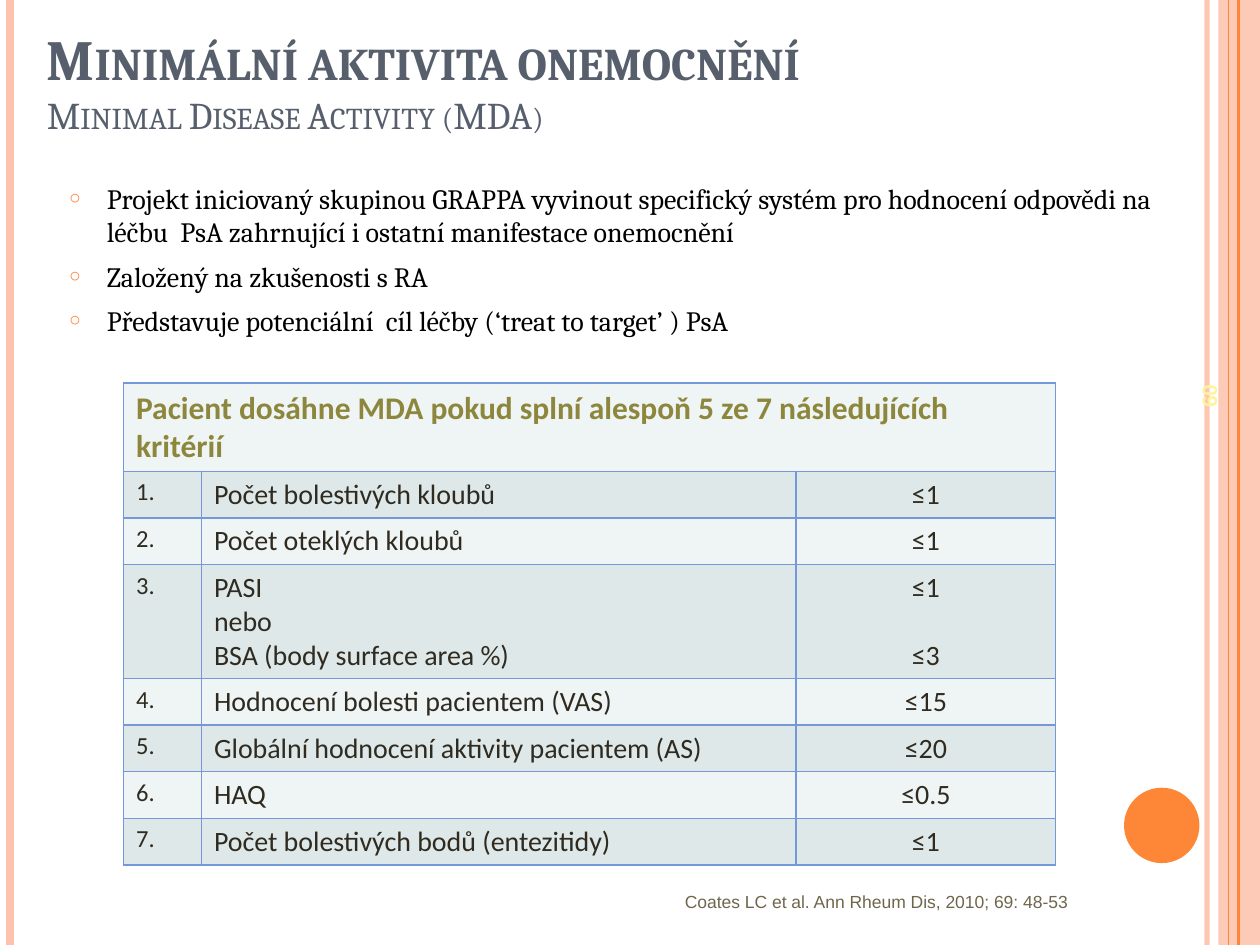
from lxml.etree import SubElement
from pptx import Presentation
from pptx.dml.color import RGBColor
from pptx.enum.shapes import MSO_CONNECTOR, MSO_SHAPE
from pptx.enum.text import MSO_ANCHOR, MSO_AUTO_SIZE, PP_ALIGN
from pptx.oxml.ns import qn
from pptx.util import Cm, Pt

COLORS = {
    "peach": "FEC3AE", "orange": "FE8637", "title": "575F6D", "body": "000000",
    "number": "FFF39D", "border": "7598D9", "light": "EFF4F4", "dark": "DEE8E8",
    "heading": "8D873E", "cell": "2F2B20", "citation": "6F664C",
}


def add_text(para, text, font, size, color, bold=False):
    run = para.add_run()
    run.text = text
    run.font.name = font
    run.font.size = Pt(size)
    run.font.bold = bold
    run.font.color.rgb = RGBColor.from_string(COLORS[color])
    return run


def set_alpha(color_format_parent, percent):
    """Make the solid colour below an element partly transparent."""
    color = next(color_format_parent.iter(qn("a:srgbClr")))
    SubElement(color, qn("a:alpha")).set("val", str(percent * 1000))


deck = Presentation()
deck.slide_width, deck.slide_height = Cm(25.4), Cm(19.05)
page = deck.slides.add_slide(deck.slide_layouts[1])
shapes = page.shapes

# Side decoration
band = shapes.add_shape(MSO_SHAPE.RECTANGLE, Cm(24.56), 0, Cm(0.84), deck.slide_height)
dot = shapes.add_shape(MSO_SHAPE.OVAL, Cm(22.66), Cm(15.88), Cm(1.52), Cm(1.52))
for shape, color in ((band, "peach"), (dot, "orange")):
    shape.shadow.inherit = False
    shape.fill.solid()
    shape.fill.fore_color.rgb = RGBColor.from_string(COLORS[color])
    shape.line.fill.background()
set_alpha(band._element.spPr, 87)

for x, color, width, opacity in (
    (24.33, "peach", 3, 93), (0.2, "peach", 4.5, 100),
    (24.97, "orange", 1.5, 100), (24.77, "orange", 0.75, 100),
):
    stripe = shapes.add_connector(MSO_CONNECTOR.STRAIGHT, Cm(x), 0, Cm(x), deck.slide_height)
    stripe.line.color.rgb = RGBColor.from_string(COLORS[color])
    stripe.line.width = Pt(width)
    if opacity < 100:
        set_alpha(stripe._element.spPr, opacity)
    SubElement(stripe._element.spPr, qn("a:effectLst"))

# Title
title = shapes.title
title.left, title.top, title.width, title.height = Cm(0.69), Cm(0.53), Cm(22.2), Cm(2.36)
title.text_frame.auto_size = MSO_AUTO_SIZE.NONE
title.text_frame.vertical_anchor = MSO_ANCHOR.BOTTOM
para = title.text_frame.paragraphs[0]
para.alignment = PP_ALIGN.LEFT
heading = add_text(para, "Minimální aktivita onemocnění", "Cambria", 32.4, "title", True)
para.add_line_break()
subheading = add_text(para, "Minimal Disease Activity (MDA)", "Cambria", 21.6, "title")
for run in (heading, subheading):
    run._r.get_or_add_rPr().set("cap", "small")

# Bullet list
body = page.placeholders[1]
body.left, body.top, body.width, body.height = Cm(1.14), Cm(3.53), Cm(23.11), Cm(4.19)
body.text_frame.auto_size = MSO_AUTO_SIZE.NONE
points = (
    "Projekt iniciovaný skupinou GRAPPA vyvinout specifický systém pro hodnocení "
    "odpovědi na léčbu  PsA zahrnující i ostatní manifestace onemocnění",
    "Založený na zkušenosti s RA",
    "Představuje potenciální  cíl léčby (‘treat to target’ ) PsA",
)
for index, point in enumerate(points):
    para = body.text_frame.add_paragraph() if index else body.text_frame.paragraphs[0]
    para.space_before = Pt(6 if index else 0)
    properties = para._p.get_or_add_pPr()
    properties.set("marL", str(Cm(0.76)))
    properties.set("indent", str(-Cm(0.76)))
    bullet_color = SubElement(properties, qn("a:buClr"))
    SubElement(bullet_color, qn("a:srgbClr")).set("val", COLORS["orange"])
    SubElement(properties, qn("a:buSzPct")).set("val", "70000")
    SubElement(properties, qn("a:buChar")).set("char", "○")
    add_text(para, point, "Cambria", 16, "body")

# Page number, reading upwards
number = shapes.add_textbox(Cm(20.98), Cm(4.57), Cm(6.78), Cm(1.02))
number.rotation = 270
number.text_frame.word_wrap = True
number.text_frame.vertical_anchor = MSO_ANCHOR.MIDDLE
add_text(number.text_frame.paragraphs[0], "60", "Arial", 12, "number", True)

# Criteria table
criteria = (
    (["Počet bolestivých kloubů"], ["≤1"]),
    (["Počet oteklých kloubů"], ["≤1"]),
    (["PASI", "nebo", "BSA (body surface area %)"], ["≤1", "≤3"]),
    (["Hodnocení bolesti pacientem (VAS)"], ["≤15"]),
    (["Globální hodnocení aktivity pacientem (AS)"], ["≤20"]),
    (["HAQ"], ["≤0.5"]),
    (["Počet bolestivých bodů (entezitidy)"], ["≤1"]),
)
column_widths = (1.57, 11.99, 5.23)
row_heights = [1.78] + [2.29 if len(names) > 1 else 0.94 for names, limits in criteria]
table = shapes.add_table(
    len(row_heights), len(column_widths), Cm(2.49), Cm(7.72),
    Cm(sum(column_widths)), Cm(sum(row_heights)),
).table
for column, width in zip(table.columns, column_widths):
    column.width = Cm(width)

for row_index, height in enumerate(row_heights):
    table.rows[row_index].height = Cm(height)
    for cell in table.rows[row_index].cells:
        cell_properties = cell._tc.get_or_add_tcPr()
        for side in ("a:lnL", "a:lnR", "a:lnT", "a:lnB"):
            border = SubElement(cell_properties, qn(side), w=str(Pt(1)))
            border_fill = SubElement(border, qn("a:solidFill"))
            SubElement(border_fill, qn("a:srgbClr")).set("val", COLORS["border"])
        cell.fill.solid()
        cell.fill.fore_color.rgb = RGBColor.from_string(COLORS["dark" if row_index % 2 else "light"])

header = table.cell(0, 0)
header.merge(table.cell(0, 2))
header.vertical_anchor = MSO_ANCHOR.MIDDLE
add_text(header.text_frame.paragraphs[0],
         "Pacient dosáhne MDA pokud splní alespoň 5 ze 7 následujících kritérií",
         "Calibri", 18, "heading", True)

for row_index, (names, limits) in enumerate(criteria, start=1):
    columns = (
        ([f"{row_index}."], 14, PP_ALIGN.LEFT),
        (names, 16, PP_ALIGN.LEFT),
        (limits, 16, PP_ALIGN.CENTER),
    )
    for column_index, (lines, size, alignment) in enumerate(columns):
        frame = table.cell(row_index, column_index).text_frame
        for line_index, line in enumerate(lines):
            para = frame.add_paragraph() if line_index else frame.paragraphs[0]
            para.alignment = alignment
            if line_index and lines is limits:
                para.space_before = Pt(19.5)  # lines up with the third name
            add_text(para, line, "Calibri", size, "cell")

# Citation
citation = shapes.add_textbox(Cm(4.29), Cm(17.83), Cm(17.48), Cm(0.69))
citation.text_frame.word_wrap = True
citation.text_frame.auto_size = MSO_AUTO_SIZE.SHAPE_TO_FIT_TEXT
para = citation.text_frame.paragraphs[0]
para.alignment = PP_ALIGN.RIGHT
add_text(para, "Coates LC et al. Ann Rheum Dis, 2010; 69: 48-53", "Arial", 10, "citation")

deck.save("out.pptx")
